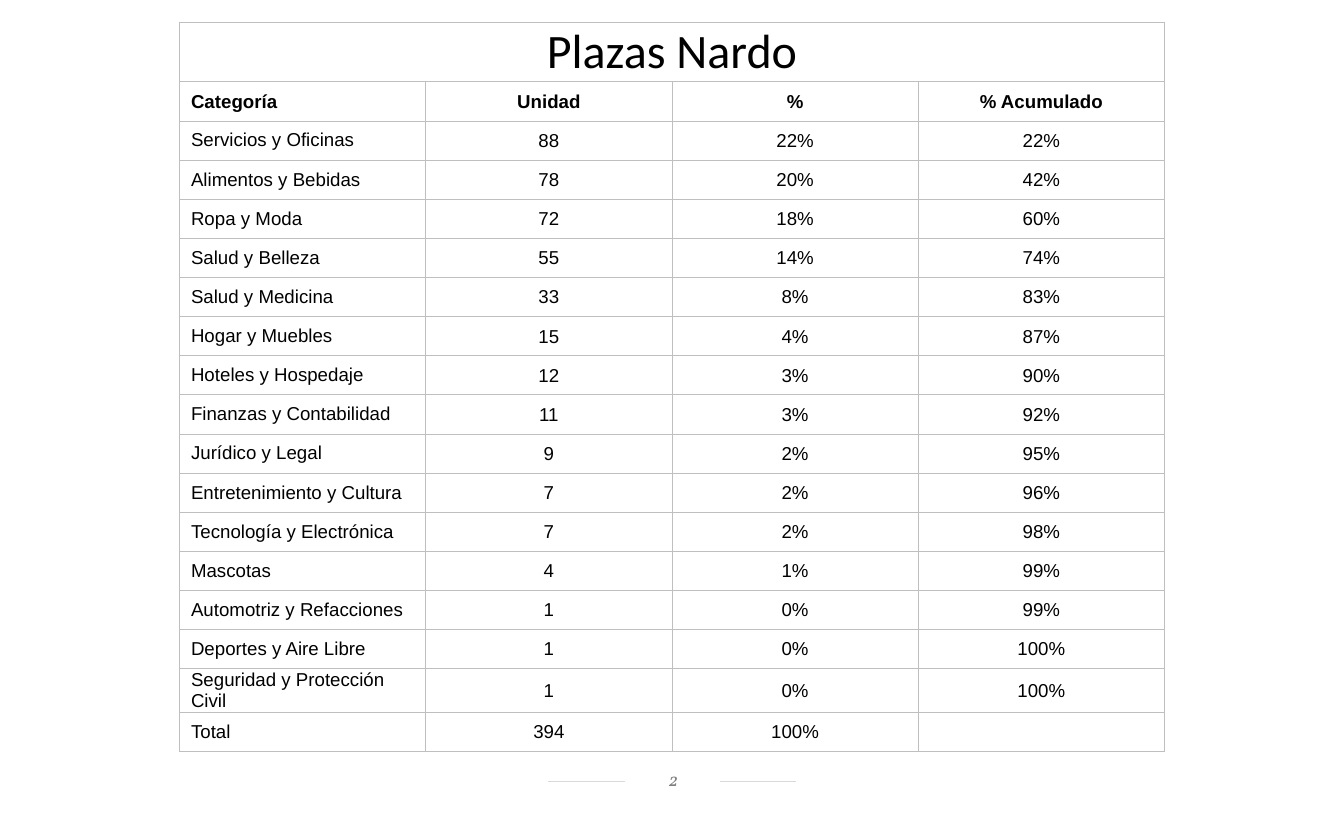
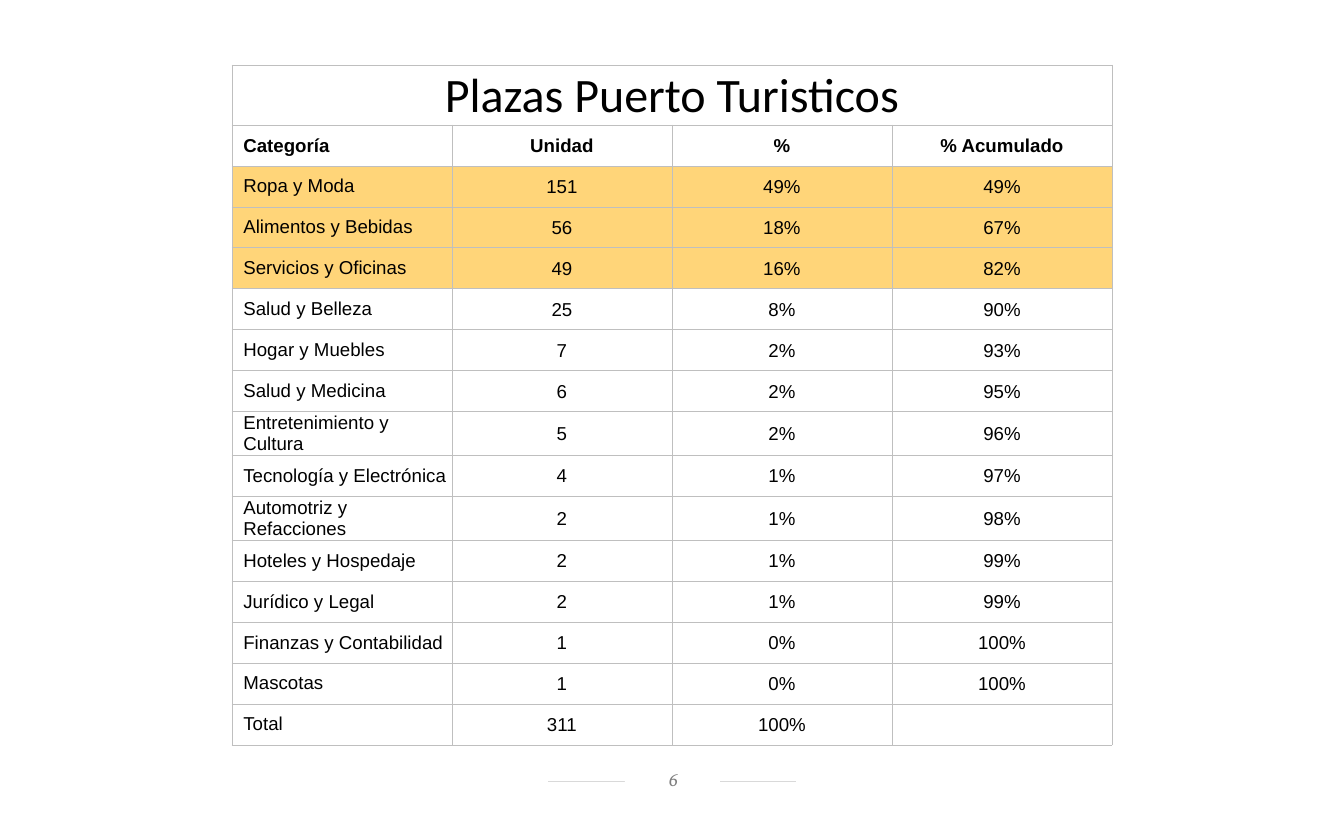
from itertools import accumulate

from lxml.etree import SubElement
from pptx import Presentation
from pptx.dml.color import RGBColor
from pptx.enum.shapes import MSO_CONNECTOR, MSO_SHAPE
from pptx.enum.text import MSO_ANCHOR, PP_ALIGN
from pptx.oxml.ns import qn
from pptx.util import Inches, Pt

# Content: units per category, in descending order
HEADERS = ("Categoría", "Unidad", "%", "% Acumulado")
NARDO = [
    ("Servicios y Oficinas", 88),
    ("Alimentos y Bebidas", 78),
    ("Ropa y Moda", 72),
    ("Salud y Belleza", 55),
    ("Salud y Medicina", 33),
    ("Hogar y Muebles", 15),
    ("Hoteles y Hospedaje", 12),
    ("Finanzas y Contabilidad", 11),
    ("Jurídico y Legal", 9),
    ("Entretenimiento y Cultura", 7),
    ("Tecnología y Electrónica", 7),
    ("Mascotas", 4),
    ("Automotriz y Refacciones", 1),
    ("Deportes y Aire Libre", 1),
    ("Seguridad y Protección Civil", 1),
]
PUERTO = [
    ("Ropa y Moda", 151),
    ("Alimentos y Bebidas", 56),
    ("Servicios y Oficinas", 49),
    ("Salud y Belleza", 25),
    ("Hogar y Muebles", 7),
    ("Salud y Medicina", 6),
    ("Entretenimiento y Cultura", 5),
    ("Tecnología y Electrónica", 4),
    ("Automotriz y Refacciones", 2),
    ("Hoteles y Hospedaje", 2),
    ("Jurídico y Legal", 2),
    ("Finanzas y Contabilidad", 1),
    ("Mascotas", 1),
]
# body is the height shared equally by all rows below the title
SLIDES = [
    dict(title="Plazas Nardo", number=2, units=NARDO, highlighted=0,
         top=0.23, width=10.26, body=6.93),
    dict(title="Plazas Puerto Turisticos", number=6, units=PUERTO, highlighted=3,
         top=0.68, width=9.17, body=6.4),
]

# Shared look
SLIDE_WIDTH, SLIDE_HEIGHT = 14, 8.5
TITLE_HEIGHT = 0.61
INSET, LABEL_INSET = 0.01, 0.12
BLACK, WHITE, GRAY = "000000", "FFFFFF", "808080"
GRID, RULE, HIGHLIGHT = "BFBFBF", "D9D9D9", "FFD579"


def color(value):
    return RGBColor.from_string(value)


def style_text(text_frame, font, size, value, align, bold=False, italic=False):
    paragraph = text_frame.paragraphs[0]
    paragraph.alignment = align
    for run in paragraph.runs:
        run.font.name, run.font.size = font, Pt(size)
        run.font.bold, run.font.italic = bold, italic
        run.font.color.rgb = color(value)


def set_margins(target, left, top, right, bottom):
    target.margin_left, target.margin_top = Inches(left), Inches(top)
    target.margin_right, target.margin_bottom = Inches(right), Inches(bottom)


def add_borders(cell):
    properties = cell._tc.get_or_add_tcPr()
    for side in ("a:lnL", "a:lnR", "a:lnT", "a:lnB"):
        line = SubElement(properties, qn(side), w=str(Pt(0.5)))
        fill = SubElement(line, qn("a:solidFill"))
        SubElement(fill, qn("a:srgbClr"), val=GRID)


def add_footer(slide, number):
    # Rule, interrupted by the white box of the page number
    rule = slide.shapes.add_connector(
        MSO_CONNECTOR.STRAIGHT, Inches(5.71), Inches(8.14), Inches(8.29), Inches(8.14))
    rule.line.color.rgb = color(RULE)
    rule.line.width = Pt(0.5)
    SubElement(rule._element.spPr, qn("a:effectLst"))

    box = slide.shapes.add_shape(
        MSO_SHAPE.RECTANGLE, Inches(6.51), Inches(7.98), Inches(0.99), Inches(0.29))
    box.shadow.inherit = False
    box.fill.solid()
    box.fill.fore_color.rgb = color(WHITE)
    box.line.fill.background()
    text_frame = box.text_frame
    text_frame.text = str(number)
    text_frame.vertical_anchor = MSO_ANCHOR.MIDDLE
    set_margins(text_frame, 0.12, 0.02, 0.1, 0.05)
    style_text(text_frame, "Vollkorn", 14, GRAY, PP_ALIGN.CENTER, italic=True)


def table_rows(title, units):
    total = sum(count for _, count in units)
    running = accumulate(count for _, count in units)
    body = [(name, str(count), f"{count / total:.0%}", f"{reached / total:.0%}")
            for (name, count), reached in zip(units, running)]
    return [(title, "", "", ""), HEADERS, *body, ("Total", str(total), "100%", "")]


def add_category_table(slide, title, units, highlighted, top, width, body):
    rows = table_rows(title, units)
    left = (SLIDE_WIDTH - width) / 2
    table = slide.shapes.add_table(
        len(rows), len(HEADERS), Inches(left), Inches(top),
        Inches(width), Inches(TITLE_HEIGHT + body)).table
    table.first_row = table.horz_banding = False
    for column in table.columns:
        column.width = Inches(width / len(HEADERS))

    for row_index, values in enumerate(rows):
        is_title = row_index == 0
        table.rows[row_index].height = Inches(
            TITLE_HEIGHT if is_title else body / (len(rows) - 1))
        for column_index, value in enumerate(values):
            cell = table.cell(row_index, column_index)
            cell.text = value
            cell.vertical_anchor = MSO_ANCHOR.MIDDLE
            is_label = column_index == 0 and not is_title
            set_margins(cell, LABEL_INSET if is_label else INSET, INSET, INSET,
                        INSET if is_label and row_index > 1 else 0)
            style_text(cell.text_frame, "Calibri" if is_title else "Arial",
                       36 if is_title else 14, BLACK,
                       PP_ALIGN.LEFT if is_label else PP_ALIGN.CENTER,
                       bold=row_index == 1)
            add_borders(cell)
            if 2 <= row_index < 2 + highlighted:
                cell.fill.solid()
                cell.fill.fore_color.rgb = color(HIGHLIGHT)
            else:
                cell.fill.background()
    table.cell(0, 0).merge(table.cell(0, len(HEADERS) - 1))


def main():
    presentation = Presentation()
    presentation.slide_width = Inches(SLIDE_WIDTH)
    presentation.slide_height = Inches(SLIDE_HEIGHT)
    for content in SLIDES:
        slide = presentation.slides.add_slide(presentation.slide_layouts[6])
        add_footer(slide, content["number"])
        add_category_table(
            slide, content["title"], content["units"], content["highlighted"],
            content["top"], content["width"], content["body"])
    presentation.save("out.pptx")


if __name__ == "__main__":
    main()
